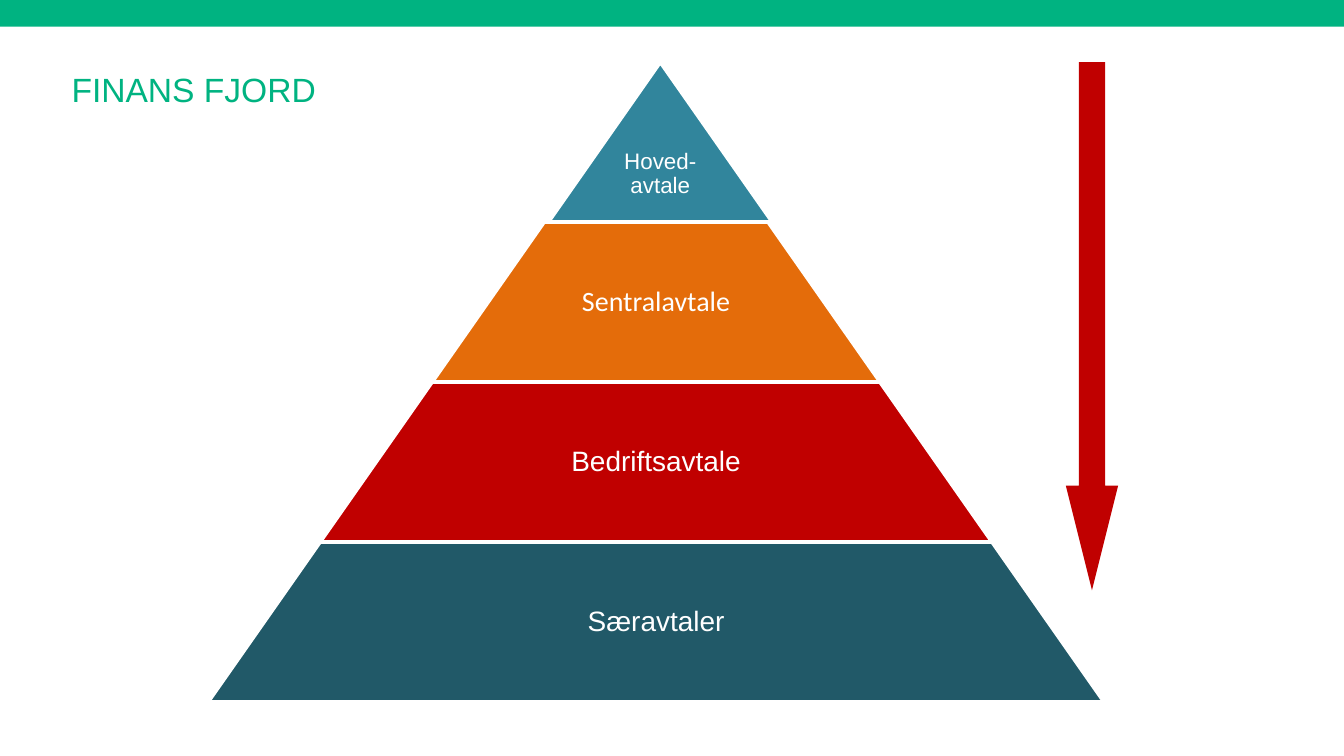
from dataclasses import dataclass

from pptx import Presentation
from pptx.dml.color import RGBColor
from pptx.enum.shapes import MSO_SHAPE as Shape
from pptx.enum.text import MSO_ANCHOR as Anchor, PP_ALIGN as Align
from pptx.util import Pt


@dataclass(frozen=True)
class Theme:
    green: str = "00B381"
    blue: str = "31859C"
    orange: str = "E46C0A"
    red: str = "C00000"
    teal: str = "215968"
    white: str = "FFFFFF"
    title: int = 18
    tier: int = 15
    top: int = 12


theme = Theme()
deck = Presentation()
deck.slide_width, deck.slide_height = Pt(720), Pt(405)
slide = deck.slides.add_slide(deck.slide_layouts[6])


def add_block(kind, left, top, width, height, color):
    block = slide.shapes.add_shape(kind, Pt(left), Pt(top), Pt(width), Pt(height))
    block.shadow.inherit = False
    block.fill.solid()
    block.fill.fore_color.rgb = RGBColor.from_string(color)
    block.line.fill.background()
    return block


def add_label(text, left, top, width, height, size, color, face="Arial"):
    box = slide.shapes.add_textbox(Pt(left), Pt(top), Pt(width), Pt(height))
    frame = box.text_frame
    frame.word_wrap = True
    para = frame.paragraphs[0]
    para.text = text
    para.font.size = Pt(size)
    para.font.name = face
    para.font.color.rgb = RGBColor.from_string(color)
    return frame


# Top band
add_block(Shape.RECTANGLE, 0, 0, 720, 14.25, theme.green)

# Pyramid: each tier is one step wider than the tier above
# Fields: text, color, size, font, middle, label share of width, anchor, bottom inset
tiers = [
    ("Hoved-\navtale", theme.blue, theme.top, "Arial", 353.75, 1, Anchor.BOTTOM, 12.5),
    ("Sentralavtale", theme.orange, theme.tier, "Calibri", 351.5, 0.65, Anchor.MIDDLE, 1.5),
    ("Bedriftsavtale", theme.red, theme.tier, "Arial", 351.5, 0.65, Anchor.MIDDLE, 1.5),
    ("Særavtaler", theme.teal, theme.tier, "Arial", 351.5, 0.65, Anchor.MIDDLE, 1.5),
]
start, high, step = 33.25, 85.7, 120

for row, (text, color, size, face, mid, share, anchor, inset) in enumerate(tiers):
    top, wide = start + row * high, (row + 1) * step
    tier = add_block(Shape.TRAPEZOID, mid - wide / 2, top, wide, high, color)
    tier.adjustments[0] = 0.7
    tier.line.color.rgb = RGBColor.from_string(theme.white)
    tier.line.width = Pt(2)

    span = wide * share
    frame = add_label(text, mid - span / 2, top, span, high, size, theme.white, face)
    frame.margin_left = frame.margin_right = frame.margin_top = Pt(1.5)
    frame.margin_bottom = Pt(inset)
    frame.vertical_anchor = anchor
    para = frame.paragraphs[0]
    para.alignment = Align.CENTER
    para.line_spacing = 0.9

# Arrow from top to bottom
arrow = add_block(Shape.DOWN_ARROW, 571, 33.25, 28, 283, theme.red)
arrow.adjustments[0] = 0.5
arrow.adjustments[1] = 2

# Title
add_label("FINANS FJORD", 31.25, 33.25, 198.5, 29, theme.title, theme.green)

deck.save("out.pptx")
